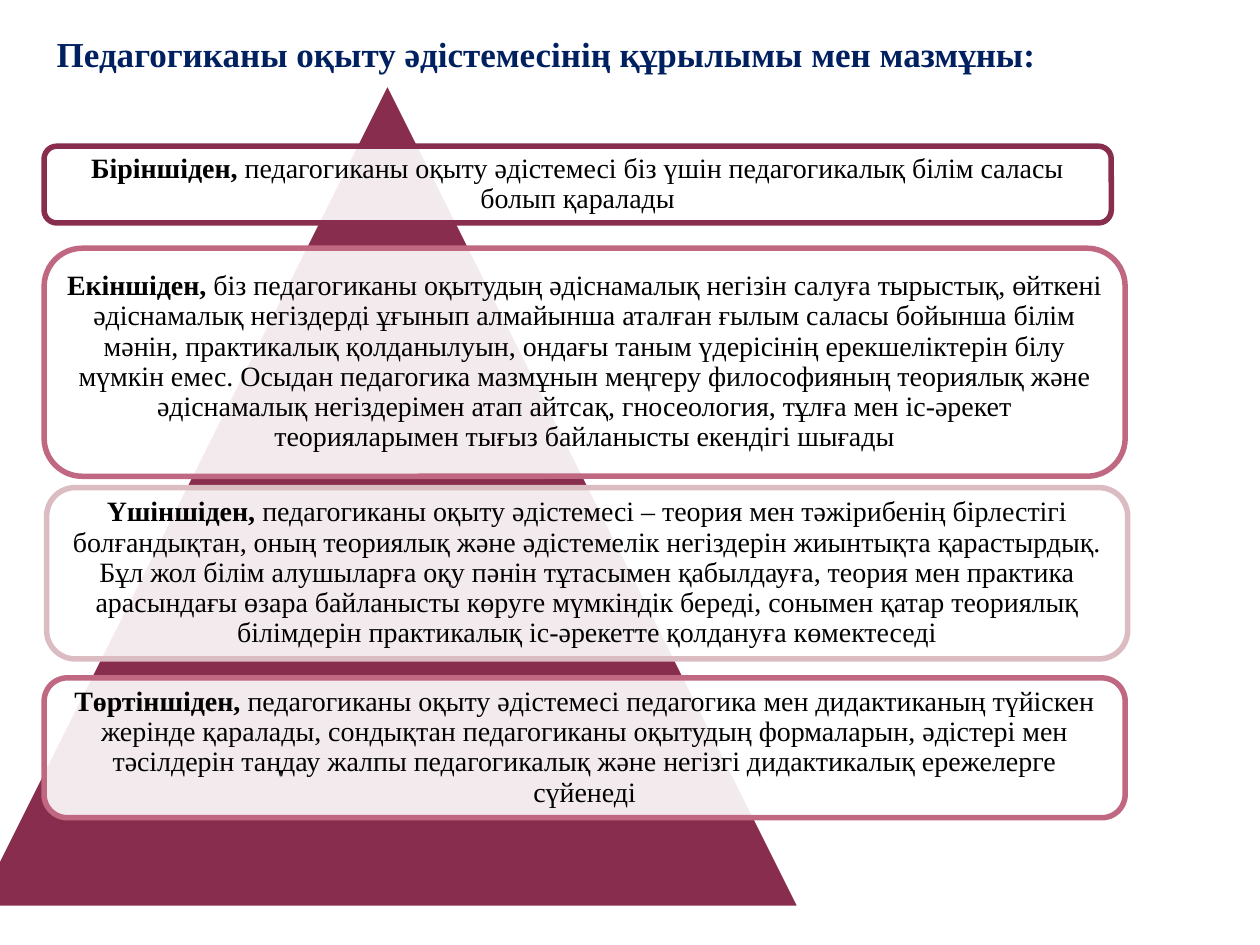
from lxml import etree
from pptx import Presentation
from pptx import util as u
from pptx.dml.color import RGBColor
from pptx.enum import shapes, text
from pptx.oxml.ns import qn

NAVY = RGBColor(0x00, 0x20, 0x60)
WINE = RGBColor(0x88, 0x2D, 0x4D)
ROSE = RGBColor(0xC0, 0x67, 0x81)
PINK = RGBColor(0xDC, 0xBC, 0xC3)
WHITE = RGBColor(0xFF, 0xFF, 0xFF)
BLACK = RGBColor(0x00, 0x00, 0x00)
FONT = "Times New Roman"

# Left, top, width, height, border colour, bold lead, body
CARDS = [
    (0.35, 1.16, 8.47, 0.61, WINE, "Біріншіден,",
     " педагогиканы оқыту әдістемесі біз үшін педагогикалық білім саласы "
     "болып қаралады"),
    (0.35, 1.97, 8.58, 1.81, ROSE, "Екіншіден,",
     " біз педагогиканы оқытудың әдіснамалық негізін салуға тырыстық, өйткені "
     "әдіснамалық негіздерді ұғынып алмайынша аталған ғылым саласы бойынша білім "
     "мәнін, практикалық қолданылуын, ондағы таным үдерісінің ерекшеліктерін білу "
     "мүмкін емес. Осыдан педагогика мазмұнын меңгеру философияның теориялық және "
     "әдіснамалық негіздерімен атап айтсақ, гносеология, тұлға мен іс-әрекет "
     "теорияларымен тығыз байланысты екендігі шығады"),
    (0.37, 3.87, 8.58, 1.36, PINK, "Үшіншіден,",
     " педагогиканы оқыту әдістемесі – теория мен тәжірибенің бірлестігі "
     "болғандықтан, оның теориялық және әдістемелік негіздерін жиынтықта "
     "қарастырдық. Бұл жол білім алушыларға оқу пәнін тұтасымен қабылдауға, "
     "теория мен практика арасындағы өзара байланысты көруге мүмкіндік береді, "
     "сонымен қатар теориялық білімдерін практикалық іс-әрекетте қолдануға "
     "көмектеседі"),
    (0.35, 5.38, 8.58, 1.11, ROSE, "Төртіншіден,",
     " педагогиканы оқыту әдістемесі педагогика мен дидактиканың түйіскен "
     "жерінде қаралады, сондықтан педагогиканы оқытудың формаларын, әдістері мен "
     "тәсілдерін таңдау жалпы педагогикалық және негізгі дидактикалық ережелерге "
     "сүйенеді"),
]


class Deck:
    """Holds the style and the current slide."""

    def __init__(self, font):
        self.font = font
        self.prs = Presentation()
        self.prs.slide_width = u.Inches(10)
        self.prs.slide_height = u.Inches(7.5)
        self.slide = self.prs.slides.add_slide(self.prs.slide_layouts[5])

    def run(self, para, words, size, color, bold):
        run = para.add_run()
        run.text = words
        run.font.name = self.font
        run.font.size = u.Pt(size)
        run.font.bold = bold
        run.font.color.rgb = color

    def title(self, words, left, top, width, height):
        box = self.slide.shapes.title
        box.left, box.top = u.Inches(left), u.Inches(top)
        box.width, box.height = u.Inches(width), u.Inches(height)
        frame = box.text_frame
        frame.word_wrap = True
        frame.vertical_anchor = text.MSO_ANCHOR.TOP
        para = frame.paragraphs[0]
        para.alignment = text.PP_ALIGN.JUSTIFY
        self.run(para, words, 20, NAVY, True)

    def shape(self, kind, left, top, width, height, fill, line):
        item = self.slide.shapes.add_shape(
            kind, u.Inches(left), u.Inches(top), u.Inches(width), u.Inches(height))
        item.shadow.inherit = False
        item.fill.solid()
        item.fill.fore_color.rgb = fill
        item.line.color.rgb = line
        item.line.width = u.Pt(3.15)
        return item

    def card(self, left, top, width, height, line, lead, body):
        item = self.shape(shapes.MSO_SHAPE.ROUNDED_RECTANGLE,
                          left, top, width, height, WHITE, line)
        # Slightly see-through fill
        color = item.fill._xPr.find(qn("a:solidFill"))[0]
        etree.SubElement(color, qn("a:alpha")).set("val", "90000")
        # Bold lead, then plain body
        frame = item.text_frame
        frame.word_wrap = True
        frame.vertical_anchor = text.MSO_ANCHOR.MIDDLE
        frame.margin_left = frame.margin_right = u.Inches(0.07)
        frame.margin_top = frame.margin_bottom = u.Inches(0.07)
        para = frame.paragraphs[0]
        para.alignment = text.PP_ALIGN.CENTER
        para.line_spacing = 0.9
        self.run(para, lead, 16, BLACK, True)
        self.run(para, body, 16, BLACK, False)


def main():
    deck = Deck(FONT)
    # Title
    deck.title("Педагогиканы оқыту әдістемесінің құрылымы мен мазмұны:",
               0.35, 0.21, 8.43, 0.44)
    # Pyramid behind the cards
    deck.shape(shapes.MSO_SHAPE.ISOSCELES_TRIANGLE,
               -0.21, 0.64, 6.57, 6.57, WINE, WHITE)
    # Four cards
    for card in CARDS:
        deck.card(*card)
    deck.prs.save("out.pptx")


if __name__ == "__main__":
    main()
